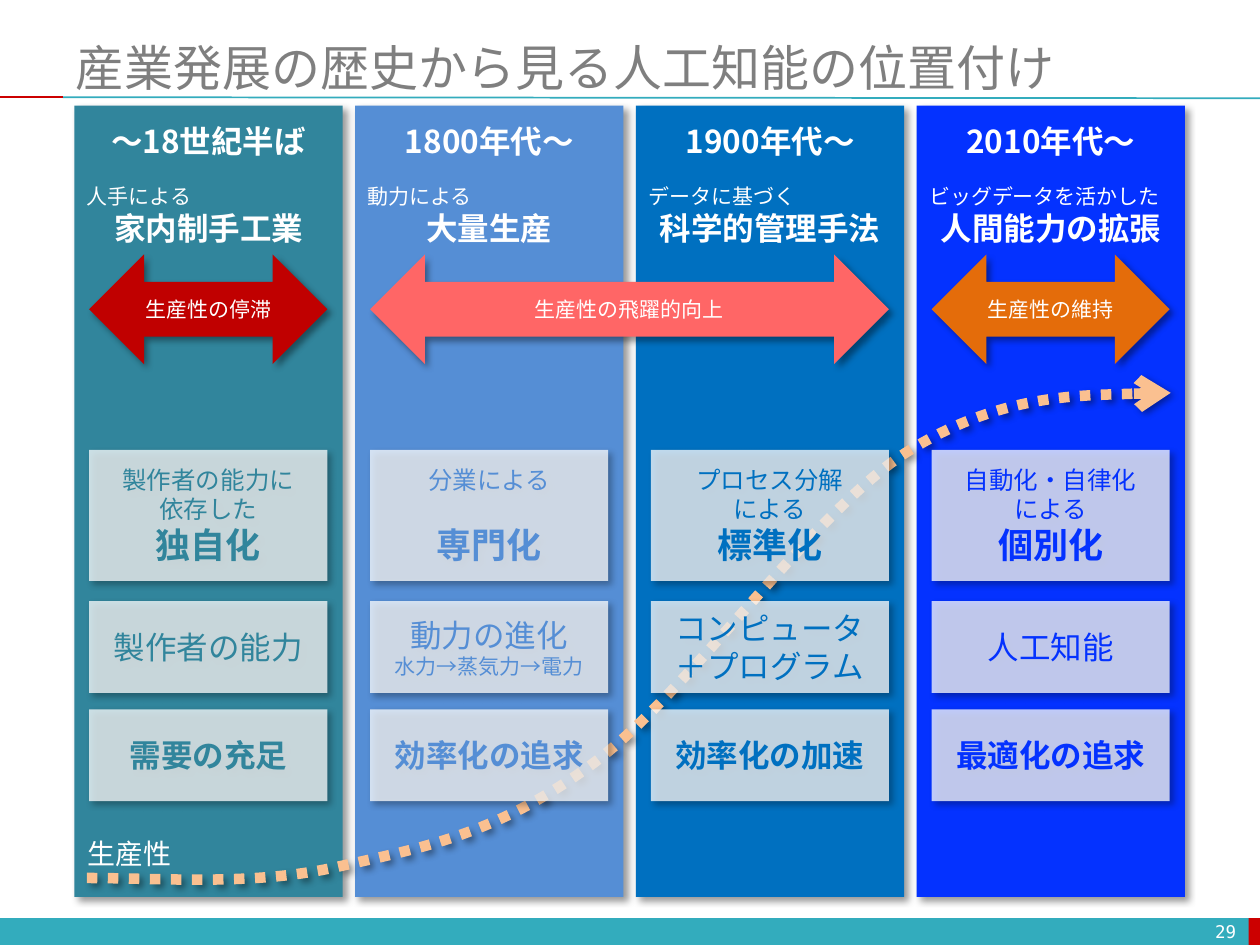
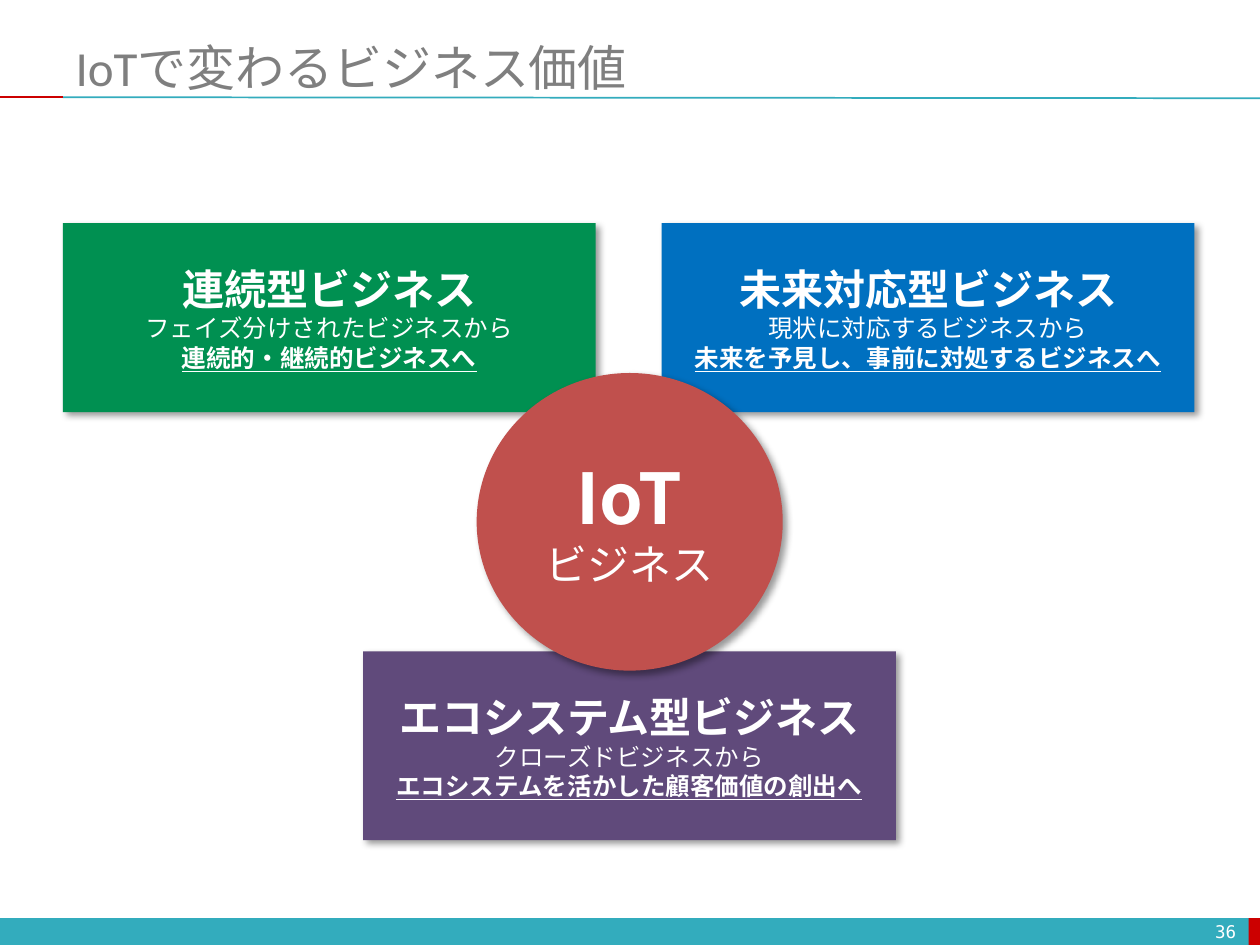
from collections import namedtuple

from lxml.etree import SubElement
from pptx import Presentation
from pptx.dml.color import RGBColor
from pptx.enum.dml import MSO_LINE
from pptx.enum.shapes import MSO_CONNECTOR, MSO_SHAPE as Preset
from pptx.enum.text import MSO_ANCHOR as Anchor, MSO_AUTO_SIZE, PP_ALIGN as Align
from pptx.oxml.ns import qn
from pptx.util import Cm, Pt

WHITE = RGBColor(0xFF, 0xFF, 0xFF)
TITLE_GRAY = RGBColor(0x7F, 0x7F, 0x7F)
BAND_TEAL = RGBColor(0x33, 0xAC, 0xBD)
BAND_RED = RGBColor(0xCC, 0x00, 0x00)
TEAL = RGBColor(0x31, 0x85, 0x9C)
SKY = RGBColor(0x55, 0x8E, 0xD5)
BLUE = RGBColor(0x00, 0x70, 0xC0)
VIVID_BLUE = RGBColor(0x04, 0x32, 0xFF)
DARK_RED = RGBColor(0xC0, 0x00, 0x00)
CORAL = RGBColor(0xFF, 0x66, 0x66)
ORANGE = RGBColor(0xE4, 0x6C, 0x0A)
PEACH = RGBColor(0xFA, 0xC0, 0x90)
GREEN = RGBColor(0x00, 0x90, 0x51)
PURPLE = RGBColor(0x60, 0x4A, 0x7B)
BRICK = RGBColor(0xC0, 0x50, 0x4D)

BODY_FONT = "Noto Sans CJK JP"
TITLE_FONT = "Calibri"
NUMBER_FONT = "DejaVu Sans Mono"
LINE_HEIGHT = 1.2

Line = namedtuple("Line", "text size bold underline align gap",
                  defaults=(False, False, Align.CENTER, 0))


class Deck:
    """Shared style plus the slide being built; boxes are (left, top, width, height) in cm."""

    def __init__(self):
        self.presentation = Presentation()
        self.presentation.slide_width = Cm(25.4)
        self.presentation.slide_height = Cm(19.05)
        self.slide = None

    def start_slide(self, title, number):
        self.slide = self.presentation.slides.add_slide(
            self.presentation.slide_layouts[5])
        # Bottom band and title rule
        self.shape((0, 18.51, 25.4, 0.54), BAND_TEAL, shadow=False)
        self.shape((25.17, 18.51, 0.23, 0.54), BAND_RED, shadow=False)
        self.rule((1.27, 1.96), (25.4, 1.98), BAND_TEAL)
        self.rule((0, 1.96), (1.27, 1.96), BAND_RED)
        # Title and page number
        placeholder = self.slide.shapes.title
        placeholder.left, placeholder.top, placeholder.width, placeholder.height = map(
            Cm, (1.27, 0.76, 24.13, 1.17))
        self.fill_text(placeholder, [Line(title, 28, align=Align.LEFT)],
                       TITLE_GRAY, TITLE_FONT)
        self.text((19.25, 18.47, 5.92, 0.61), [Line(number, 10, align=Align.RIGHT)],
                  NUMBER_FONT, Anchor.MIDDLE)

    def fill_text(self, shape, lines, color=WHITE, font_name=BODY_FONT,
                  anchor=Anchor.MIDDLE):
        frame = shape.text_frame
        frame.word_wrap = True
        frame.auto_size = MSO_AUTO_SIZE.NONE
        frame.vertical_anchor = anchor
        for index, line in enumerate(lines):
            paragraph = frame.add_paragraph() if index else frame.paragraphs[0]
            paragraph.text = line.text
            paragraph.alignment = line.align
            paragraph.line_spacing = Pt(line.size * LINE_HEIGHT)
            if line.gap:
                paragraph.space_before = Pt(line.gap)
            font = paragraph.font
            font.name = font_name
            font.size = Pt(line.size)
            font.bold = line.bold
            font.underline = line.underline
            font.color.rgb = color
            properties = paragraph._p.pPr.find(qn("a:defRPr"))
            SubElement(properties, qn("a:ea"), typeface=BODY_FONT)

    def text(self, box, lines, font_name=BODY_FONT, anchor=Anchor.TOP):
        self.fill_text(self.slide.shapes.add_textbox(*map(Cm, box)), lines,
                       font_name=font_name, anchor=anchor)

    def shape(self, box, fill, lines=(), color=WHITE, preset=Preset.RECTANGLE,
              opacity=100, shadow=True):
        shape = self.slide.shapes.add_shape(preset, *map(Cm, box))
        shape.fill.solid()
        shape.fill.fore_color.rgb = fill
        shape.line.fill.background()
        if opacity < 100:
            fill_color = shape._element.spPr.find(qn("a:solidFill"))[0]
            SubElement(fill_color, qn("a:alpha"), val=str(opacity * 1000))
        shape.shadow.inherit = False
        if shadow:
            self.drop_shadow(shape)
        if lines:
            self.fill_text(shape, lines, color)

    def drop_shadow(self, shape):
        shape.shadow.inherit = False
        effects = shape._element.spPr.find(qn("a:effectLst"))
        outer = SubElement(effects, qn("a:outerShdw"), blurRad=str(Pt(4)),
                           dist=str(Pt(3)), dir=str(45 * 60000),
                           algn="tl", rotWithShape="0")
        shade = SubElement(outer, qn("a:srgbClr"), val="000000")
        SubElement(shade, qn("a:alpha"), val="40000")

    def rule(self, start, end, color):
        connector = self.slide.shapes.add_connector(
            MSO_CONNECTOR.STRAIGHT, *map(Cm, start + end))
        connector.line.color.rgb = color
        connector.line.width = Pt(1)
        SubElement(connector._element.spPr, qn("a:effectLst"))

    def dotted_curve(self, points, color):
        """Bezier curve: a start point, then two controls and an end for each arc."""
        start, *rest = [(Cm(x), Cm(y)) for x, y in points]
        builder = self.slide.shapes.build_freeform(*start)
        builder.add_line_segments(rest, close=False)
        curve = builder.convert_to_shape()
        # Turn every three straight segments into one arc
        outline = next(curve._element.iter(qn("a:path")))
        segments = outline.findall(qn("a:lnTo"))
        for first in range(0, len(segments), 3):
            arc = SubElement(outline, qn("a:cubicBezTo"))
            for segment in segments[first:first + 3]:
                arc.append(segment[0])
                outline.remove(segment)
        curve.fill.background()
        curve.line.color.rgb = color
        curve.line.width = Pt(6)
        curve.line.dash_style = MSO_LINE.ROUND_DOT
        SubElement(curve._element.spPr.find(qn("a:ln")), qn("a:tailEnd"), type="arrow")
        self.drop_shadow(curve)


# One era per column: colour, heading, caption, then the three cards
ERAS = [
    (TEAL, "〜18世紀半ば", ("人手による", "家内制手工業"),
     [Line("製作者の能力に", 14), Line("依存した", 14), Line("独自化", 20, True)],
     [Line("製作者の能力", 18)], "需要の充足"),
    (SKY, "1800年代〜", ("動力による", "大量生産"),
     [Line("分業による", 14), Line("専門化", 20, True, gap=17)],
     [Line("動力の進化", 18), Line("水力→蒸気力→電力", 12)], "効率化の追求"),
    (BLUE, "1900年代〜", ("データに基づく", "科学的管理手法"),
     [Line("プロセス分解", 14), Line("による", 14), Line("標準化", 20, True)],
     [Line("コンピュータ", 18), Line("＋プログラム", 18)], "効率化の加速"),
    (VIVID_BLUE, "2010年代〜", ("ビッグデータを活かした", "人間能力の拡張"),
     [Line("自動化・自律化", 14), Line("による", 14), Line("個別化", 20, True)],
     [Line("人工知能", 18)], "最適化の追求"),
]
COLUMN_LEFT, COLUMN_STEP, COLUMN_WIDTH = 1.5, 5.66, 5.41
CARD_INDENT, CARD_WIDTH = 0.3, 4.8

PRODUCTIVITY_CURVE = [
    (1.75, 17.7),
    (3.28, 17.7), (5.08, 17.86), (6.78, 17.48),
    (8.46, 17.1), (9.98, 16.84), (11.89, 15.44),
    (13.79, 14.07), (16.31, 10.41), (18.24, 9.14),
    (20.19, 7.9), (23.2, 7.92), (23.6, 7.92),
]


def build_history(deck):
    deck.start_slide("産業発展の歴史から見る人工知能の位置付け", "29")
    lefts = [COLUMN_LEFT + COLUMN_STEP * index for index in range(len(ERAS))]

    # Era columns, then the curve that runs behind the cards
    for left, era in zip(lefts, ERAS):
        deck.shape((left, 2.13, COLUMN_WIDTH, 15.95), era[0])
    deck.dotted_curve(PRODUCTIVITY_CURVE, PEACH)

    # Headings, captions and cards
    for left, (color, heading, (means, method), change, driver, goal) in zip(lefts, ERAS):
        deck.text((left, 2.34, COLUMN_WIDTH, 1.02), [Line(heading, 18, True)])
        deck.text((left, 3.58, COLUMN_WIDTH, 1.55),
                  [Line(means, 12, align=Align.LEFT), Line(method, 18, True)])
        cards = [(9.07, 2.64, change), (12.12, 1.85, driver),
                 (14.3, 1.85, [Line(goal, 18, True)])]
        for top, height, lines in cards:
            deck.shape((left + CARD_INDENT, top, CARD_WIDTH, height), WHITE,
                       lines, color, opacity=75)

    # Productivity arrows: first column, number of columns spanned
    for first, span, color, label in [(1, 2, CORAL, "生産性の飛躍的向上"),
                                      (0, 1, DARK_RED, "生産性の停滞"),
                                      (3, 1, ORANGE, "生産性の維持")]:
        width = CARD_WIDTH + COLUMN_STEP * (span - 1)
        deck.shape((lefts[first] + CARD_INDENT, 5.13, width, 2.21), color,
                   [Line(label, 12)], preset=Preset.LEFT_RIGHT_ARROW)
    deck.text((1.52, 16.74, 3.2, 0.94), [Line("生産性", 16, align=Align.LEFT)])


def build_iot(deck):
    deck.start_slide("IoTで変わるビジネス価値", "36")

    # Three business types around the hub
    for left, top, color, name, before, after in [
        (1.27, 4.5, GREEN, "連続型ビジネス",
         "フェイズ分けされたビジネスから", "連続的・継続的ビジネスへ"),
        (7.32, 13.13, PURPLE, "エコシステム型ビジネス",
         "クローズドビジネスから", "エコシステムを活かした顧客価値の創出へ"),
        (13.34, 4.5, BLUE, "未来対応型ビジネス",
         "現状に対応するビジネスから", "未来を予見し、事前に対処するビジネスへ"),
    ]:
        deck.shape((left, top, 10.74, 3.81), color,
                   [Line(name, 24, True), Line(before, 14), Line(after, 14, True, True)])

    # Hub
    deck.shape((9.61, 7.52, 6.17, 6), BRICK,
               [Line("IoT", 40, True), Line("ビジネス", 24)], preset=Preset.OVAL)


def main():
    deck = Deck()
    build_history(deck)
    build_iot(deck)
    deck.presentation.save("out.pptx")


if __name__ == "__main__":
    main()
